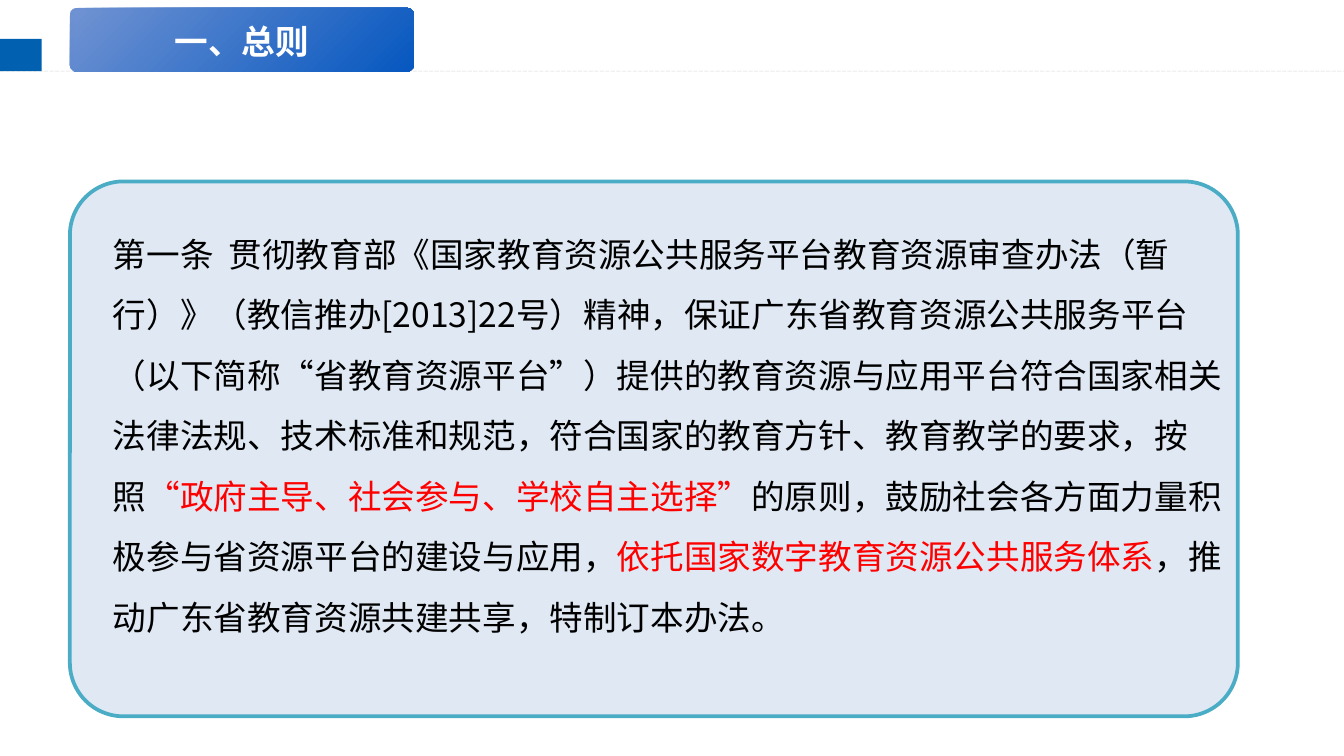
from lxml import etree
from pptx import Presentation
from pptx.dml.color import RGBColor
from pptx.enum import dml, shapes, text
from pptx.oxml import ns
from pptx.util import Inches, Pt

FONT = "Noto Sans CJK SC"
BLACK = RGBColor(0x00, 0x00, 0x00)
WHITE = RGBColor(0xFF, 0xFF, 0xFF)
RED = RGBColor(0xFF, 0x00, 0x00)
GREY = RGBColor(0xC0, 0xC0, 0xC0)
BLUE = RGBColor(0x01, 0x60, 0xAF)
LIGHT_BLUE = RGBColor(0x6F, 0x92, 0xD2)
DEEP_BLUE = RGBColor(0x07, 0x58, 0xC0)
PALE_BLUE = RGBColor(0xDC, 0xE6, 0xF2)
TEAL = RGBColor(0x4B, 0xAC, 0xC6)

TITLE = "一、总则"
ARTICLE = [
    ("第一条  贯彻教育部《国家教育资源公共服务平台教育资源审查办法（暂行）》"
     "（教信推办[2013]22号）精神，保证广东省教育资源公共服务平台"
     "（以下简称“省教育资源平台”）提供的教育资源与应用平台符合国家相关"
     "法律法规、技术标准和规范，符合国家的教育方针、教育教学的要求，按照", BLACK),
    ("“政府主导、社会参与、学校自主选择”", RED),
    ("的原则，鼓励社会各方面力量积极参与省资源平台的建设与应用，", BLACK),
    ("依托国家数字教育资源公共服务体系", RED),
    ("，推动广东省教育资源共建共享，特制订本办法。", BLACK),
]


def set_alpha(element, percent):
    color = element.find(".//" + ns.qn("a:srgbClr"))
    etree.SubElement(color, ns.qn("a:alpha"), val=str(percent * 1000))


def set_font(para, bold=False):
    para.font.name = FONT
    para.font.size = Pt(18)
    para.font.bold = bold
    properties = para._p.pPr.find(ns.qn("a:defRPr"))
    etree.SubElement(properties, ns.qn("a:ea"), typeface=FONT)


def add_plain_shape(page, kind, left, top, width, height):
    shape = page.shapes.add_shape(
        kind, Inches(left), Inches(top), Inches(width), Inches(height))
    shape.shadow.inherit = False
    shape.line.fill.background()
    if kind == shapes.MSO_SHAPE.ROUNDED_RECTANGLE:
        shape.adjustments[0] = 0.1
    return shape


def fill_gradient(shape):
    shape.fill.gradient()
    shape.fill.gradient_angle = 315
    for stop, color in zip(shape.fill.gradient_stops, (LIGHT_BLUE, DEEP_BLUE)):
        stop.color.rgb = color


def add_header_rule(page, left, top, width, height):
    bottom = Inches(top + height)
    rule = page.shapes.add_connector(
        shapes.MSO_CONNECTOR.STRAIGHT, Inches(left), bottom, Inches(left + width), bottom)
    rule.line.color.rgb = GREY
    rule.line.width = Pt(0.75)
    rule.line.dash_style = dml.MSO_LINE.SQUARE_DOT
    set_alpha(rule.line._ln, 22)
    etree.SubElement(rule._element.spPr, ns.qn("a:effectLst"))
    marker = add_plain_shape(page, shapes.MSO_SHAPE.RECTANGLE, left, top, 0.31, height)
    marker.fill.solid()
    marker.fill.fore_color.rgb = BLUE


def add_article(page, left, top, width, height):
    panel = add_plain_shape(
        page, shapes.MSO_SHAPE.ROUNDED_RECTANGLE, left, top, width, height)
    panel.fill.solid()
    panel.fill.fore_color.rgb = PALE_BLUE
    set_alpha(panel._element.spPr, 90)
    panel.line.color.rgb = TEAL
    panel.line.width = Pt(2)

    box = page.shapes.add_textbox(
        Inches(left + 0.28), Inches(top + 0.36), Inches(width - 0.32), Inches(2.91))
    frame = box.text_frame
    frame.word_wrap = True
    frame.vertical_anchor = text.MSO_ANCHOR.MIDDLE
    frame.margin_left = frame.margin_right = Inches(0.04)
    frame.margin_top = frame.margin_bottom = Inches(0.03)
    para = frame.paragraphs[0]
    para.line_spacing = 1.5
    para.space_after = Pt(12)
    set_font(para)
    for wording, color in ARTICLE:
        span = para.add_run()
        span.text = wording
        span.font.color.rgb = color


def add_title(page, left, top, width, height):
    plate = add_plain_shape(
        page, shapes.MSO_SHAPE.ROUNDED_RECTANGLE, left, top, width, height)
    label = add_plain_shape(
        page, shapes.MSO_SHAPE.RECTANGLE,
        left + 0.03, top + 0.02, width - 0.06, height - 0.02)
    for shape in (plate, label):
        fill_gradient(shape)
    label.text_frame.vertical_anchor = text.MSO_ANCHOR.MIDDLE
    para = label.text_frame.paragraphs[0]
    para.text = TITLE
    para.alignment = text.PP_ALIGN.CENTER
    set_font(para, bold=True)
    para.font.color.rgb = WHITE


def main():
    deck = Presentation()
    deck.slide_width = Inches(10)
    deck.slide_height = deck.slide_width * 9 // 16
    page = deck.slides.add_slide(deck.slide_layouts[6])
    add_header_rule(page, 0, 0.29, 10, 0.24)
    add_article(page, 0.52, 1.35, 8.69, 3.98)
    add_title(page, 0.52, 0.06, 2.56, 0.47)
    deck.save("out.pptx")


if __name__ == "__main__":
    main()
